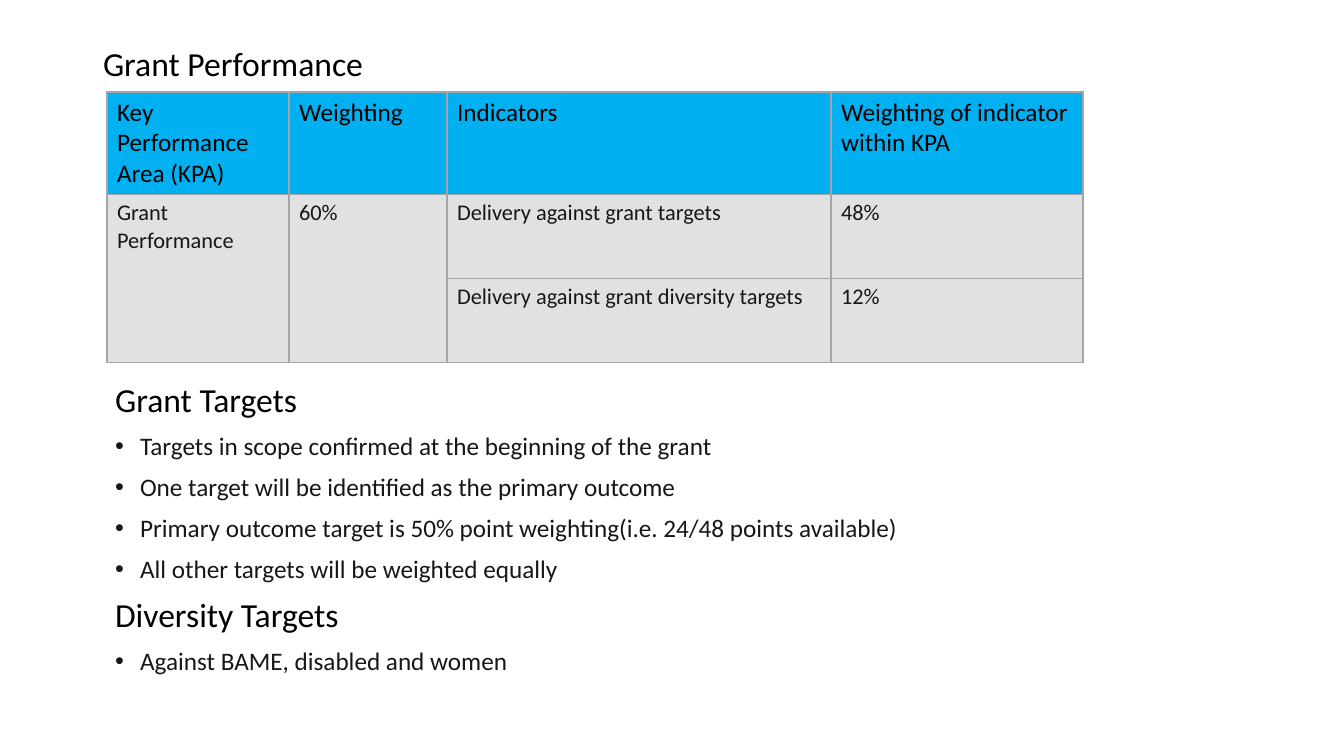
import pptx
import pptx.dml.color
import pptx.enum.text
import pptx.oxml
import pptx.oxml.ns
import pptx.util

PX = 914400 / 100.8


def px(length):
    return pptx.util.Emu(round(length * PX))


def style(paragraph, size, color):
    for run in paragraph.runs:
        run.font.name = "Calibri"
        run.font.size = pptx.util.Pt(size)
        run.font.bold = False
        run.font.color.rgb = pptx.dml.color.RGBColor.from_string(color)


BLACK, INK, GRID = "000000", "181717", "A5A5A5"
HEADER_FILL, ROW_FILL = "00B0F0", "E1E1E1"
NAMESPACE = pptx.oxml.ns.nsdecls("a")

deck = pptx.Presentation()
deck.slide_width, deck.slide_height = px(1344), px(756)
slide = deck.slides.add_slide(deck.slide_layouts[1])

heading = slide.shapes.title
heading.left, heading.top, heading.width, heading.height = map(px, (93, 40, 295, 51))
heading.text_frame.text = "Grant Performance"
heading.text_frame.auto_size = pptx.enum.text.MSO_AUTO_SIZE.NONE
heading.text_frame.vertical_anchor = pptx.enum.text.MSO_ANCHOR.MIDDLE
heading_line = heading.text_frame.paragraphs[0]
heading_line.alignment = pptx.enum.text.PP_ALIGN.LEFT
heading_line.line_spacing = 0.9
style(heading_line, 24, BLACK)

kpa_rows = [
    ["Key Performance Area (KPA)", "Weighting", "Indicators", "Weighting of indicator within KPA"],
    ["Grant Performance", "60%", "Delivery against grant targets", "48%"],
    ["", "", "Delivery against grant diversity targets", "12%"],
]
column_widths = [182, 158, 384, 252]
row_heights = [102, 84, 84]
kpa_table = slide.shapes.add_table(
    len(row_heights), len(column_widths),
    px(107), px(92), px(sum(column_widths)), px(sum(row_heights)),
).table
kpa_table.first_row = False
kpa_table.horz_banding = False
for column, width in zip(kpa_table.columns, column_widths):
    column.width = px(width)
for row, height in zip(kpa_table.rows, row_heights):
    row.height = px(height)

for r, kpa_row in enumerate(kpa_rows):
    for c, entry in enumerate(kpa_row):
        cell = kpa_table.cell(r, c)
        cell.text_frame.text = entry
        style(cell.text_frame.paragraphs[0], 16 if r else 18, INK if r else BLACK)
        cell_properties = cell._tc.get_or_add_tcPr()
        for side in ("lnL", "lnR", "lnT", "lnB"):
            cell_properties.append(pptx.oxml.parse_xml(
                f'<a:{side} {NAMESPACE} w="12700"><a:solidFill>'
                f'<a:srgbClr val="{GRID}"/></a:solidFill></a:{side}>'
            ))
        cell.fill.solid()
        cell.fill.fore_color.rgb = pptx.dml.color.RGBColor.from_string(ROW_FILL if r else HEADER_FILL)
for c in (0, 1):
    kpa_table.cell(1, c).merge(kpa_table.cell(2, c))

target_lines = [
    ("Grant Targets", False),
    ("Targets in scope confirmed at the beginning of the grant", True),
    ("One target will be identified as the primary outcome", True),
    ("Primary outcome target is 50% point weighting(i.e. 24/48 points available)", True),
    ("All other targets will be weighted equally", True),
    ("Diversity Targets", False),
    ("Against BAME, disabled and women", True),
]
targets = slide.placeholders[1]
targets.left, targets.top, targets.width, targets.height = map(px, (105, 378, 1146, 303))
targets.text_frame.text = "\n".join(line for line, bulleted in target_lines)
targets.text_frame.auto_size = pptx.enum.text.MSO_AUTO_SIZE.NONE
targets.text_frame.vertical_anchor = pptx.enum.text.MSO_ANCHOR.TOP
for i, (paragraph, (line, bulleted)) in enumerate(zip(targets.text_frame.paragraphs, target_lines)):
    indent = px(25) if bulleted else 0
    layout = paragraph._p.get_or_add_pPr()
    layout.set("marL", str(indent))
    layout.set("indent", str(-indent))
    bullet_parts = ['buFont {} typeface="Arial"', 'buChar {} char="•"'] if bulleted else ["buNone {}"]
    for part in bullet_parts:
        layout.append(pptx.oxml.parse_xml(f"<a:{part.format(NAMESPACE)}/>"))
    paragraph.line_spacing = 0.9
    paragraph.space_before = pptx.util.Pt(10 if i else 0)
    style(paragraph, 18 if bulleted else 24, INK if bulleted else BLACK)

deck.save("out.pptx")
